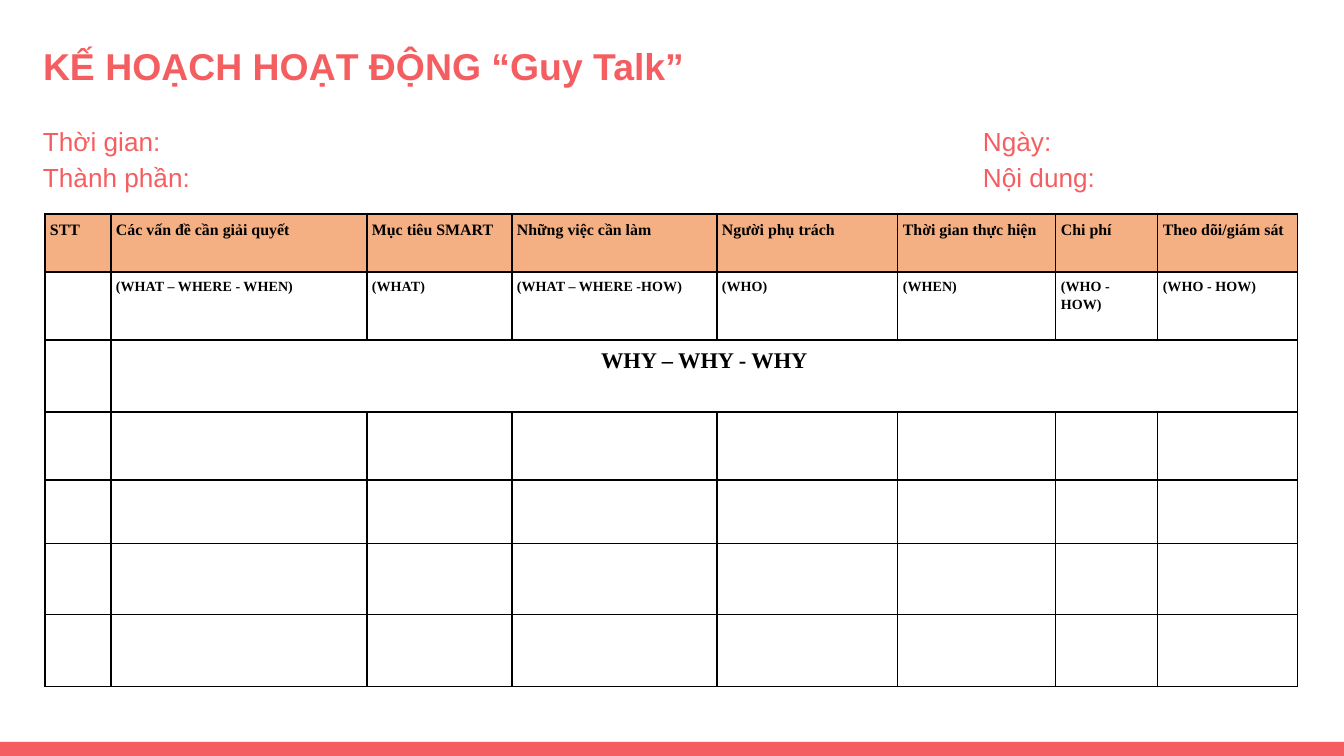
"""Build the activity plan slide with its heading, details and planning table."""
from dataclasses import dataclass

import lxml.etree
import pptx
import pptx.dml.color
import pptx.enum.shapes
import pptx.enum.text
import pptx.oxml.ns
import pptx.util

EMU_PER_PX = 914400 / 134.4
CORAL = "F55E61"
PEACH = "F4B083"
BLACK = "000000"
LINE_SPACING = 1.15
CELL_MARGIN = 5
WHY_ROW = 2
ROW_HEIGHTS = [58, 68, 72, 68, 64, 71, 72]


@dataclass(frozen=True)
class Box:
    left: int
    top: int
    width: int
    height: int


@dataclass(frozen=True)
class TextStyle:
    font: str
    size: float
    color: str
    bold: bool = True
    centered: bool = False
    space_after: int = 0


@dataclass(frozen=True)
class Column:
    width: int
    heading: str
    question: str


HEADING = TextStyle("Arial", 20, CORAL)
DETAIL = TextStyle("Arial", 14, CORAL, bold=False)
COLUMN_HEADING = TextStyle("Times New Roman", 8.5, BLACK, space_after=6)
QUESTION = TextStyle("Times New Roman", 7.5, BLACK, space_after=6)
WHY = TextStyle("Times New Roman", 12, BLACK, centered=True, space_after=6)

COLUMNS = [
    Column(66, "STT", ""),
    Column(256, "Các vấn đề cần giải quyết", "(WHAT – WHERE - WHEN)"),
    Column(145, "Mục tiêu SMART", "(WHAT)"),
    Column(205, "Những việc cần làm", "(WHAT – WHERE -HOW)"),
    Column(181, "Người phụ trách", "(WHO)"),
    Column(158, "Thời gian thực hiện", "(WHEN)"),
    Column(102, "Chi phí", "(WHO - HOW)"),
    Column(140, "Theo dõi/giám sát", "(WHO - HOW)"),
]


def px(length: int) -> pptx.util.Emu:
    """Turn pixels into EMU."""
    return pptx.util.Emu(round(length * EMU_PER_PX))


def rgb(color: str) -> pptx.dml.color.RGBColor:
    """Turn a hex string into a colour."""
    return pptx.dml.color.RGBColor.from_string(color)


def place(box: Box) -> tuple:
    """Return the box as EMU lengths."""
    return px(box.left), px(box.top), px(box.width), px(box.height)


def format_paragraph(paragraph, style: TextStyle) -> None:
    """Apply a text style to a paragraph and its runs."""
    alignment = pptx.enum.text.PP_ALIGN
    paragraph.alignment = alignment.CENTER if style.centered else alignment.LEFT
    paragraph.line_spacing = LINE_SPACING
    paragraph.space_before = pptx.util.Pt(0)
    paragraph.space_after = pptx.util.Pt(style.space_after)
    for run in paragraph.runs:
        run.font.name = style.font
        run.font.size = pptx.util.Pt(style.size)
        run.font.bold = style.bold
        run.font.color.rgb = rgb(style.color)


def write_text(text_frame, text: str, style: TextStyle) -> None:
    """Fill a frame without insets, with text from its top edge."""
    text_frame.text = text
    text_frame.word_wrap = True
    text_frame.auto_size = pptx.enum.text.MSO_AUTO_SIZE.NONE
    text_frame.vertical_anchor = pptx.enum.text.MSO_ANCHOR.TOP
    text_frame.margin_left = text_frame.margin_right = 0
    text_frame.margin_top = text_frame.margin_bottom = 0
    for paragraph in text_frame.paragraphs:
        format_paragraph(paragraph, style)


def add_title(slide, box: Box, text: str) -> None:
    """Place and format the title."""
    title = slide.shapes.title
    title.left, title.top, title.width, title.height = place(box)
    write_text(title.text_frame, text, HEADING)


def add_details(slide, box: Box, text: str, tab: int) -> None:
    """Add detail labels in two columns divided by a tab stop."""
    shape = slide.shapes.add_textbox(*place(box))
    write_text(shape.text_frame, text, DETAIL)
    qn = pptx.oxml.ns.qn
    for paragraph in shape.text_frame.paragraphs:
        properties = paragraph._p.get_or_add_pPr()
        tabs = lxml.etree.SubElement(properties, qn("a:tabLst"))
        lxml.etree.SubElement(tabs, qn("a:tab"), pos=str(px(tab)), algn="l")


def set_borders(cell) -> None:
    """Draw a thin black line on each side of a cell."""
    qn = pptx.oxml.ns.qn
    properties = cell._tc.get_or_add_tcPr()
    for index, side in enumerate(("lnL", "lnR", "lnT", "lnB")):
        line = lxml.etree.Element(qn(f"a:{side}"), w=str(pptx.util.Pt(0.75)))
        fill = lxml.etree.SubElement(line, qn("a:solidFill"))
        lxml.etree.SubElement(fill, qn("a:srgbClr"), val=BLACK)
        properties.insert(index, line)


def write_cell(cell, text: str, style: TextStyle) -> None:
    """Write one formatted paragraph into a cell."""
    cell.text_frame.text = text
    format_paragraph(cell.text_frame.paragraphs[0], style)


def add_plan(slide, left: int, top: int) -> None:
    """Add the planning table."""
    width = sum(column.width for column in COLUMNS)
    box = Box(left, top, width, sum(ROW_HEIGHTS))
    table = slide.shapes.add_table(len(ROW_HEIGHTS), len(COLUMNS), *place(box)).table
    table.first_row = table.horz_banding = False
    for row, height in zip(table.rows, ROW_HEIGHTS):
        row.height = px(height)
    for cell in table.iter_cells():
        cell.margin_left = cell.margin_right = px(CELL_MARGIN)
        cell.margin_top = cell.margin_bottom = px(CELL_MARGIN)
        cell.fill.background()
        set_borders(cell)
    for index, column in enumerate(COLUMNS):
        table.columns[index].width = px(column.width)
        heading = table.cell(0, index)
        heading.fill.solid()
        heading.fill.fore_color.rgb = rgb(PEACH)
        write_cell(heading, column.heading, COLUMN_HEADING)
        if column.question:
            write_cell(table.cell(1, index), column.question, QUESTION)
    why = table.cell(WHY_ROW, 1)
    why.merge(table.cell(WHY_ROW, len(COLUMNS) - 1))
    write_cell(why, "WHY – WHY - WHY", WHY)


def add_footer_band(slide, box: Box) -> None:
    """Add the coloured band along the bottom edge."""
    rectangle = pptx.enum.shapes.MSO_SHAPE.RECTANGLE
    band = slide.shapes.add_shape(rectangle, *place(box))
    band.shadow.inherit = False
    band.fill.solid()
    band.fill.fore_color.rgb = rgb(CORAL)
    band.line.fill.background()


def main() -> None:
    """Build and save the presentation."""
    presentation = pptx.Presentation()
    presentation.slide_width, presentation.slide_height = px(1344), px(756)
    slide = presentation.slides.add_slide(presentation.slide_layouts[5])
    add_footer_band(slide, Box(0, 742, 1344, 14))
    add_title(slide, Box(43, 36, 1066, 50), "KẾ HOẠCH HOẠT ĐỘNG “Guy Talk”")
    details = "Thời gian:\tNgày:\nThành phần:\tNội dung:"
    add_details(slide, Box(43, 121, 1066, 72), details, tab=940)
    add_plan(slide, 45, 214)
    presentation.save("out.pptx")


if __name__ == "__main__":
    main()
